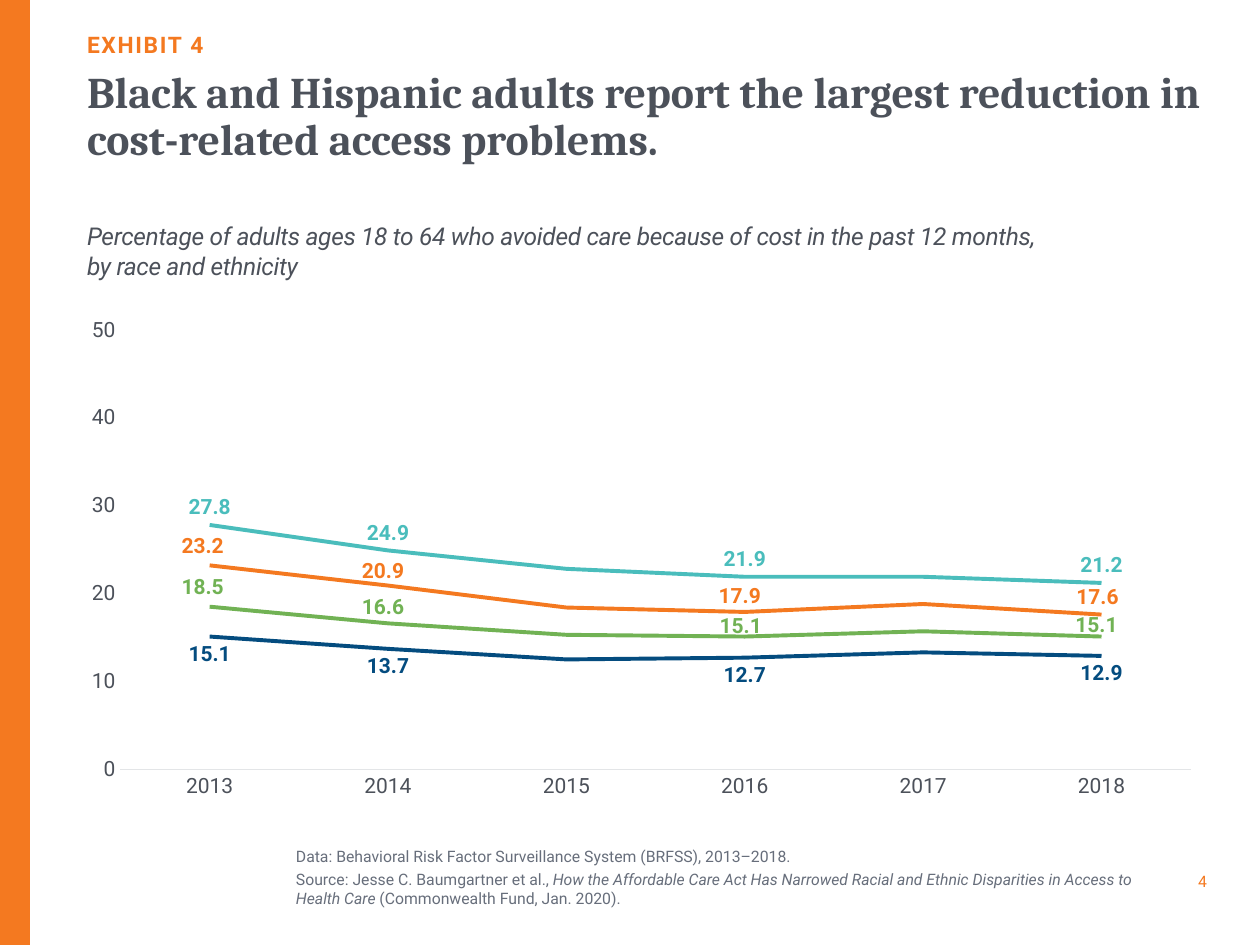
from lxml import etree
from pptx import Presentation
from pptx.chart.data import CategoryChartData
from pptx.dml.color import RGBColor
from pptx.enum.chart import XL_CHART_TYPE, XL_LABEL_POSITION, XL_TICK_MARK
from pptx.enum.shapes import MSO_SHAPE
from pptx.enum.text import MSO_ANCHOR, PP_ALIGN
from pptx.oxml.ns import qn
from pptx.util import Emu, Pt

ABOVE, BELOW = XL_LABEL_POSITION.ABOVE, XL_LABEL_POSITION.BELOW
NO_TICK = XL_TICK_MARK.NONE
TOP, MIDDLE, BOTTOM = MSO_ANCHOR.TOP, MSO_ANCHOR.MIDDLE, MSO_ANCHOR.BOTTOM
LEFT, RIGHT = PP_ALIGN.LEFT, PP_ALIGN.RIGHT

COLORS = {
    "orange": "F47920", "slate": "4C515A", "gray": "676E7B", "axis": "E3E5E7",
    "green": "71B254", "teal": "4ABDBC", "navy": "044C7F",
}
BODY_FONT, TITLE_FONT = "Roboto", "Cambria"

EXHIBIT = "EXHIBIT 4"
TITLE = "Black and Hispanic adults report the largest reduction in cost-related access problems."
SUBTITLE = [
    "Percentage of adults ages 18 to 64 who avoided care because of cost in the past 12 months,",
    "by race and ethnicity",
]
NOTES = [
    "Data: Behavioral Risk Factor Surveillance System (BRFSS), 2013–2018.",
    [
        ("Source: Jesse C. Baumgartner et al., ", False),
        ("How the Affordable Care Act Has Narrowed Racial and Ethnic Disparities in Access to Health Care ", True),
        ("(Commonwealth Fund, Jan. 2020).", False),
    ],
]
PAGE = "4"

YEARS = ["2013", "2014", "2015", "2016", "2017", "2018"]
LABELED_YEARS = ["2013", "2014", "2016", "2018"]
NO_SHIFT = [(0, 0)] * len(LABELED_YEARS)
GROUPS = [
    ("All", [18.5, 16.6, 15.3, 15.1, 15.7, 15.1], "green", ABOVE, [(-7, -2), (-5, 1), (-4, 7), (-5, 6)]),
    ("Black", [23.2, 20.9, 18.4, 17.9, 18.8, 17.6], "orange", ABOVE, [(-7, -2), (-5, 3), (-5, 2), (-4, 0)]),
    ("Hispanic", [27.8, 24.9, 22.8, 21.9, 21.9, 21.2], "teal", ABOVE, NO_SHIFT),
    ("White", [15.1, 13.7, 12.5, 12.7, 13.3, 12.9], "navy", BELOW, NO_SHIFT),
]

SCALE = 914400 / 126
MARGIN, CONTENT_W = 87, 1115
CHART_H = 494
PLOT_AREA = {"x": 0.03, "y": 0.03, "w": 0.96, "h": 0.89}


def px(value):
    return Emu(round(value * SCALE))


def box(*lengths):
    return [px(length) for length in lengths]


def rgb(name):
    return RGBColor.from_string(COLORS[name])


def style_font(font, size, color, name=BODY_FONT, bold=False, italic=False):
    font.size, font.name, font.bold, font.italic = Pt(size), name, bold, italic
    font.color.rgb = rgb(color)


def add_text(slide, paragraphs, at, size, color, name=BODY_FONT, bold=False, italic=False,
             anchor=TOP, align=LEFT, tracking=0, line_spacing=None, gap=0):
    frame = slide.shapes.add_textbox(*box(*at)).text_frame
    frame.word_wrap = True
    frame.vertical_anchor = anchor
    frame.margin_left = frame.margin_right = frame.margin_top = frame.margin_bottom = 0
    for index, content in enumerate(paragraphs):
        paragraph = frame.paragraphs[0] if index == 0 else frame.add_paragraph()
        paragraph.alignment = align
        if line_spacing:
            paragraph.line_spacing = line_spacing
        if index and gap:
            paragraph.space_before = Pt(gap)
        pieces = [(content, italic)] if isinstance(content, str) else content
        for words, slanted in pieces:
            run = paragraph.add_run()
            run.text = words
            style_font(run.font, size, color, name, bold, slanted)
            if tracking:
                run.font._element.set("spc", str(round(tracking * 100)))


def manual_layout(**settings):
    layout = etree.Element(qn("c:layout"))
    manual = etree.SubElement(layout, qn("c:manualLayout"))
    for tag, value in settings.items():
        etree.SubElement(manual, qn(f"c:{tag}")).set("val", str(value))
    return layout


def label_points(series, color, position, shifts):
    series.data_labels.show_value = False
    for year, (dx, dy) in zip(LABELED_YEARS, shifts):
        index = YEARS.index(year)
        label = series.points[index].data_label
        style_font(label.font, 12, color, bold=True)
        label.position = position
        if dx or dy:
            layout = manual_layout(x=round(dx / CONTENT_W, 4), y=round(dy / CHART_H, 4))
            element = series.data_labels._element.xpath(f"c:dLbl[c:idx/@val='{index}']")[0]
            element.find(qn("c:idx")).addnext(layout)


def add_trend_chart(slide):
    data = CategoryChartData(number_format="#,##0.0")
    data.categories = YEARS
    for group, values, *_ in GROUPS:
        data.add_series(group, values)
    frame = slide.shapes.add_chart(XL_CHART_TYPE.LINE, *box(MARGIN, 315, CONTENT_W, CHART_H), data)
    chart = frame.chart
    chart.has_legend = chart.has_title = False
    style_font(chart.font, 10, "slate")
    chart.plots[0].vary_by_categories = False

    years, percent = chart.category_axis, chart.value_axis
    for axis in (years, percent):
        axis.major_tick_mark = axis.minor_tick_mark = NO_TICK
        axis.has_major_gridlines = False
        style_font(axis.tick_labels.font, 12, "slate")
    years.format.line.color.rgb = rgb("axis")
    years.format.line.width = Pt(0.75)
    percent.format.line.fill.background()
    percent.minimum_scale, percent.maximum_scale, percent.major_unit = 0, 50, 10
    percent.tick_labels.number_format = "0"
    percent.tick_labels.number_format_is_linked = False

    for series, (_, _, color, position, shifts) in zip(chart.plots[0].series, GROUPS):
        series.smooth = False
        series.format.line.color.rgb = rgb(color)
        series.format.line.width = Pt(2.25)
        label_points(series, color, position, shifts)

    plot_area = chart._chartSpace.find(".//" + qn("c:plotArea"))
    for existing in plot_area.findall(qn("c:layout")):
        plot_area.remove(existing)
    plot_area.insert(0, manual_layout(layoutTarget="inner", xMode="edge", yMode="edge", **PLOT_AREA))


def main():
    deck = Presentation()
    deck.slide_width, deck.slide_height = box(1260, 945)
    slide = deck.slides.add_slide(deck.slide_layouts[6])

    side_band = slide.shapes.add_shape(MSO_SHAPE.RECTANGLE, *box(0, 0, 30, 945))
    side_band.shadow.inherit = False
    side_band.fill.solid()
    side_band.fill.fore_color.rgb = rgb("orange")
    side_band.line.fill.background()

    add_text(slide, [EXHIBIT], (MARGIN, 24, CONTENT_W, 34), 13, "orange",
             bold=True, anchor=BOTTOM, tracking=1)
    add_text(slide, [TITLE], (MARGIN, 71, CONTENT_W, 164), 25, "slate",
             name=TITLE_FONT, bold=True, line_spacing=0.9)
    add_text(slide, SUBTITLE, (MARGIN, 221, 1002, 59), 14, "slate",
             italic=True, anchor=MIDDLE, tracking=-0.2)
    add_trend_chart(slide)
    add_text(slide, NOTES, (296, 835, 872, 84), 9, "gray", anchor=MIDDLE, gap=2)
    add_text(slide, [PAGE], (1168, 867, 39, 28), 9, "orange", anchor=MIDDLE, align=RIGHT)

    deck.save("out.pptx")


if __name__ == "__main__":
    main()
